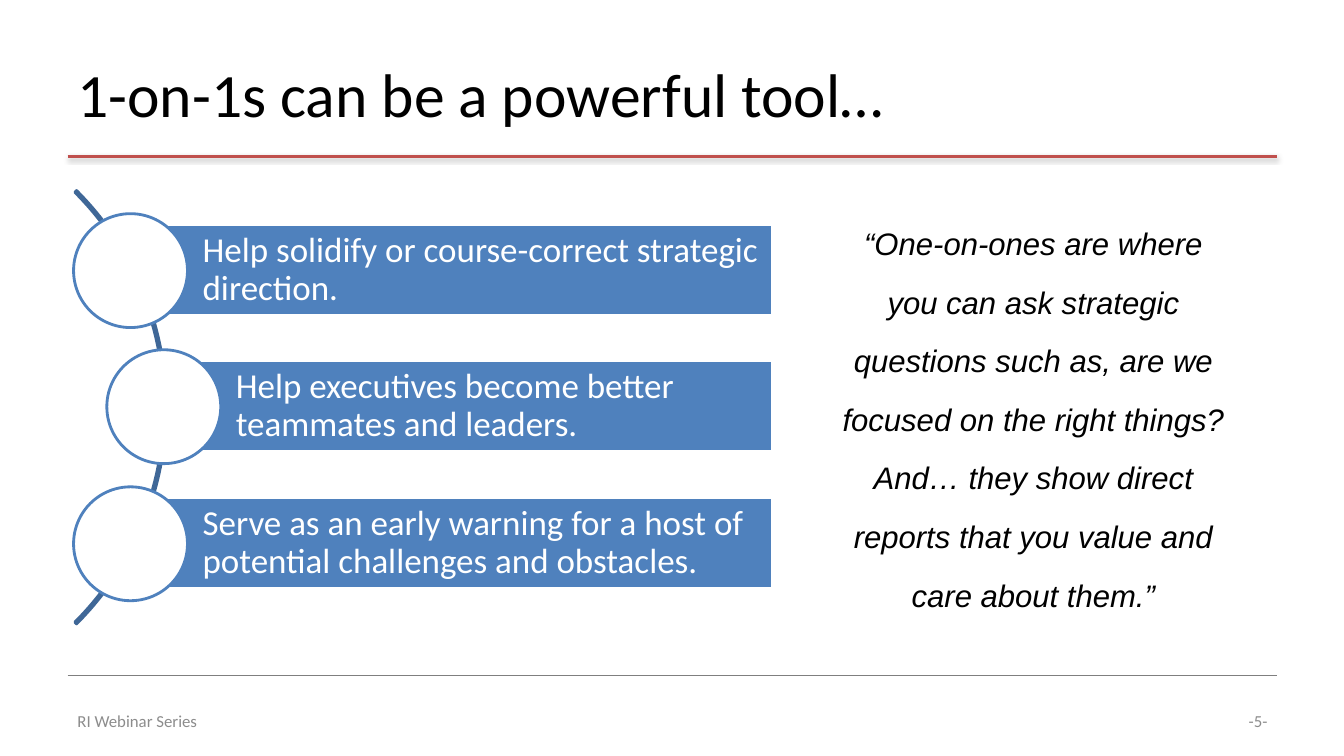
import pptx
import pptx.dml.color
import pptx.enum.shapes
import pptx.enum.text
import pptx.oxml
import pptx.oxml.ns
import pptx.util

PX = 9144  # 100 px to the inch
BLUE, WHITE, BLACK, GRAY = "4F81BD", "FFFFFF", "000000", "8C8C8C"
SHAPE = pptx.enum.shapes.MSO_SHAPE
ALIGN = pptx.enum.text.PP_ALIGN
ANCHOR = pptx.enum.text.MSO_ANCHOR

BENEFITS = [
    (73, "Help solidify or course-correct strategic direction."),
    (106, "Help executives become better teammates and leaders."),
    (73, "Serve as an early warning for a host of potential challenges and obstacles."),
]
QUOTE = (
    "“One-on-ones are where you can ask strategic questions such as, "
    "are we focused on the right things? And… they show direct reports "
    "that you value and care about them.”"
)
RULE_SHADOW = (
    '<a:outerShdw blurRad="39370" dist="20320" dir="5400000" rotWithShape="0">'
    '<a:srgbClr val="000000"><a:alpha val="38000"/></a:srgbClr></a:outerShdw>'
)


def emu(*lengths):
    return [pptx.util.Emu(length * PX) for length in lengths]


def rgb(hex_color):
    return pptx.dml.color.RGBColor.from_string(hex_color)


def write(frame, text, size, color, align=ALIGN.LEFT, anchor=ANCHOR.MIDDLE,
          font="Calibri", italic=False, spacing=1.0, insets=(10, 5, 10, 5)):
    frame.word_wrap = True
    frame.vertical_anchor = anchor
    (frame.margin_left, frame.margin_top,
     frame.margin_right, frame.margin_bottom) = emu(*insets)
    paragraph = frame.paragraphs[0]
    paragraph.text = text
    paragraph.alignment = align
    paragraph.line_spacing = spacing
    paragraph.font.name = font
    paragraph.font.size = pptx.util.Pt(size)
    paragraph.font.italic = italic
    paragraph.font.color.rgb = rgb(color)


def add_text(slide, box, text, size, color, **style):
    write(slide.shapes.add_textbox(*emu(*box)).text_frame, text, size, color, **style)


def add_shape(slide, kind, box, fill, outline):
    shape = slide.shapes.add_shape(kind, *emu(*box))
    shape.shadow.inherit = False
    if fill:
        shape.fill.solid()
        shape.fill.fore_color.rgb = rgb(fill)
    else:
        shape.fill.background()
    shape.line.color.rgb = rgb(outline)
    shape.line.width = pptx.util.Pt(2)
    return shape


def add_rule(slide, y, color, width, effect=""):
    """Draw a horizontal line between the slide margins."""
    rule = slide.shapes.add_connector(
        pptx.enum.shapes.MSO_CONNECTOR.STRAIGHT, *emu(67, y, 1267, y))
    rule.line.color.rgb = rgb(color)
    rule.line.width = pptx.util.Pt(width)
    namespace = pptx.oxml.ns.nsdecls("a")
    rule._element.spPr.append(
        pptx.oxml.parse_xml(f"<a:effectLst {namespace}>{effect}</a:effectLst>"))


def add_benefit(slide, left, top, text):
    """Draw a bar that ends at the shared right edge, with a circle on its left end."""
    bar_left = left + 56
    bar = add_shape(slide, SHAPE.RECTANGLE, (bar_left, top, 766 - bar_left, 90), BLUE, WHITE)
    write(bar.text_frame, text, 25, WHITE, spacing=0.9, insets=(72, 7, 7, 7))
    add_shape(slide, SHAPE.OVAL, (left, top - 11, 113, 113), WHITE, BLUE)


def main():
    deck = pptx.Presentation()
    deck.slide_width, deck.slide_height = emu(1333, 750)
    slide = deck.slides.add_slide(deck.slide_layouts[6])

    add_rule(slide, 670, "7F7F7F", 0.75)
    add_rule(slide, 155, "C0504D", 2, RULE_SHADOW)
    add_text(slide, (67, 30, 1200, 125), "1-on-1s can be a powerful tool…", 44, BLACK)

    arc = add_shape(slide, SHAPE.BLOCK_ARC, (-443, 100, 608, 608), None, "3F6797")
    for index, value in enumerate((189, 27, 0.004)):
        arc.adjustments[index] = value
    for row, (left, text) in enumerate(BENEFITS):
        add_benefit(slide, left, 223 + row * 271 // 2, text)

    add_text(slide, (824, 197, 402, 443), QUOTE, 22.2, BLACK, align=ALIGN.CENTER,
             anchor=ANCHOR.TOP, font="Arial", italic=True, spacing=1.57)
    add_text(slide, (67, 695, 422, 40), "RI Webinar Series", 12, GRAY)
    add_text(slide, (956, 695, 311, 40), "-5-", 12, GRAY, align=ALIGN.RIGHT)
    deck.save("out.pptx")


if __name__ == "__main__":
    main()
